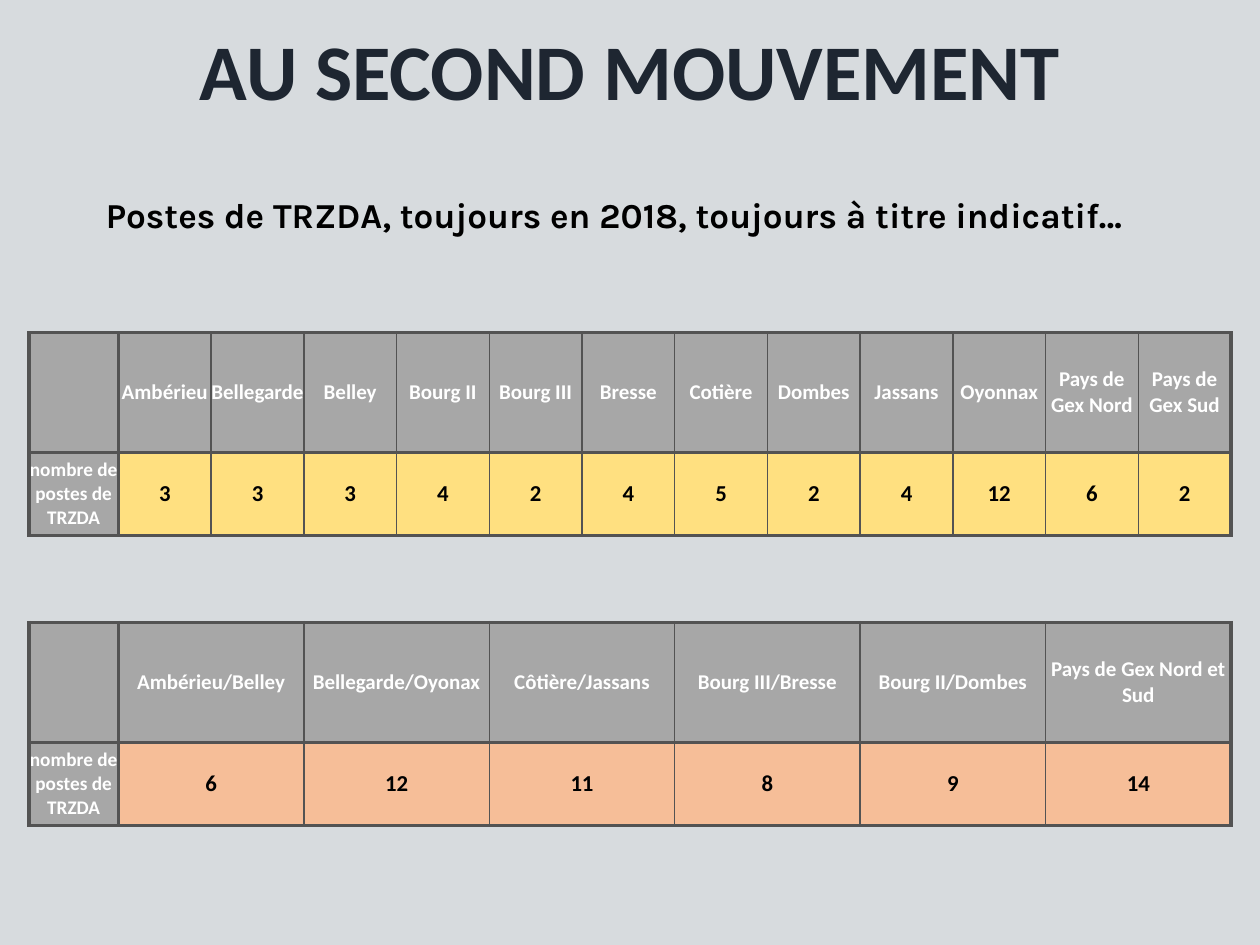
from dataclasses import dataclass

from lxml.etree import SubElement
from pptx import Presentation
from pptx.dml.color import RGBColor
from pptx.enum.text import MSO_ANCHOR, PP_ALIGN
from pptx.oxml.ns import qn
from pptx.util import Inches, Pt


@dataclass(frozen=True)
class Theme:
    background: str = "D7DBDE"
    title: str = "1E2631"
    ink: str = "000000"
    header_ink: str = "FFFFFF"
    header: str = "A7A7A7"
    border: str = "535353"
    single_zone: str = "FFE080"
    paired_zone: str = "F6BE98"
    font: str = "Calibri"
    subtitle_font: str = "Karla"
    title_size: int = 45
    subtitle_size: int = 20
    header_size: int = 12
    label_size: int = 11
    value_size: int = 13


THEME = Theme()
WIDTH, HEIGHT = Inches(10), Inches(7.5)
LABEL_COL, DATA_COLS = 7.1, 88.3
HEADER_ROW, VALUE_ROW = 12.67, 8.8
ROW_LABEL = "nombre de postes de TRZDA"

SINGLE_ZONES = {
    "Ambérieu": 3, "Bellegarde": 3, "Belley": 3, "Bourg II": 4,
    "Bourg III": 2, "Bresse": 4, "Cotière": 5, "Dombes": 2,
    "Jassans": 4, "Oyonnax": 12, "Pays de Gex Nord": 6, "Pays de Gex Sud": 2,
}
PAIRED_ZONES = {
    "Ambérieu/Belley": 6, "Bellegarde/Oyonax": 12, "Côtière/Jassans": 11,
    "Bourg III/Bresse": 8, "Bourg II/Dombes": 9, "Pays de Gex Nord et Sud": 14,
}


def across(percent):
    return int(WIDTH * percent / 100)


def down(percent):
    return int(HEIGHT * percent / 100)


def style_paragraph(p, size, color, font, align):
    p.alignment = align
    p.font.size = Pt(size)
    p.font.bold = True
    p.font.name = font
    p.font.color.rgb = RGBColor.from_string(color)


def add_text(slide, x, y, w, h, text, size, color, font,
             align=PP_ALIGN.LEFT, anchor=MSO_ANCHOR.TOP, spacing=1.0):
    tf = slide.shapes.add_textbox(across(x), down(y), across(w), down(h)).text_frame
    tf.word_wrap = True
    tf.vertical_anchor = anchor
    tf.margin_left = tf.margin_right = tf.margin_top = tf.margin_bottom = Inches(0.05)
    p = tf.paragraphs[0]
    p.text = text
    p.line_spacing = spacing
    style_paragraph(p, size, color, font, align)


def set_borders(cell, left, right):
    tc_pr = cell._tc.get_or_add_tcPr()
    sides = {"a:lnL": left, "a:lnR": right, "a:lnT": 2, "a:lnB": 2}
    for i, (tag, width) in enumerate(sides.items()):
        ln = SubElement(tc_pr, qn(tag), w=str(Pt(width)))
        fill = SubElement(ln, qn("a:solidFill"))
        SubElement(fill, qn("a:srgbClr"), val=THEME.border)
        tc_pr.insert(i, ln)


def style_cell(cell, text, fill, size, color):
    cell.fill.solid()
    cell.fill.fore_color.rgb = RGBColor.from_string(fill)
    cell.vertical_anchor = MSO_ANCHOR.MIDDLE
    cell.margin_left = cell.margin_right = cell.margin_top = cell.margin_bottom = 0
    cell.text = text
    style_paragraph(cell.text_frame.paragraphs[0], size, color, THEME.font, PP_ALIGN.CENTER)


def add_zone_table(slide, y, zones, value_fill):
    count = len(zones)
    table = slide.shapes.add_table(
        2, count + 1, across(2.3), down(y),
        across(LABEL_COL + DATA_COLS), down(HEADER_ROW + VALUE_ROW)).table
    for row, height in zip(table.rows, (HEADER_ROW, VALUE_ROW)):
        row.height = down(height)
    for c, col in enumerate(table.columns):
        col.width = across(DATA_COLS / count if c else LABEL_COL)

    header = (THEME.header, THEME.header_size, THEME.header_ink)
    label = (THEME.header, THEME.label_size, THEME.header_ink)
    value = (value_fill, THEME.value_size, THEME.ink)
    rows = [("", *zones), (ROW_LABEL, *map(str, zones.values()))]
    for r, texts in enumerate(rows):
        for c, text in enumerate(texts):
            cell = table.cell(r, c)
            look = header if r == 0 else value if c else label
            style_cell(cell, text, *look)
            set_borders(cell, left=2 if c < 2 else 1, right=2 if c in (0, count) else 1)


def main():
    prs = Presentation()
    prs.slide_width, prs.slide_height = WIDTH, HEIGHT
    slide = prs.slides.add_slide(prs.slide_layouts[6])
    slide.background.fill.solid()
    slide.background.fill.fore_color.rgb = RGBColor.from_string(THEME.background)

    add_text(slide, 6.3, 2.13, 87.4, 10.93, "AU SECOND MOUVEMENT",
             THEME.title_size, THEME.title, THEME.font,
             PP_ALIGN.CENTER, MSO_ANCHOR.BOTTOM, 0.9)
    add_text(slide, 7.9, 19.87, 84.1, 5.6,
             "Postes de TRZDA, toujours en 2018, toujours à titre indicatif…",
             THEME.subtitle_size, THEME.ink, THEME.subtitle_font)
    add_zone_table(slide, 35.2, SINGLE_ZONES, THEME.single_zone)
    add_zone_table(slide, 65.87, PAIRED_ZONES, THEME.paired_zone)
    prs.save("out.pptx")


if __name__ == "__main__":
    main()
